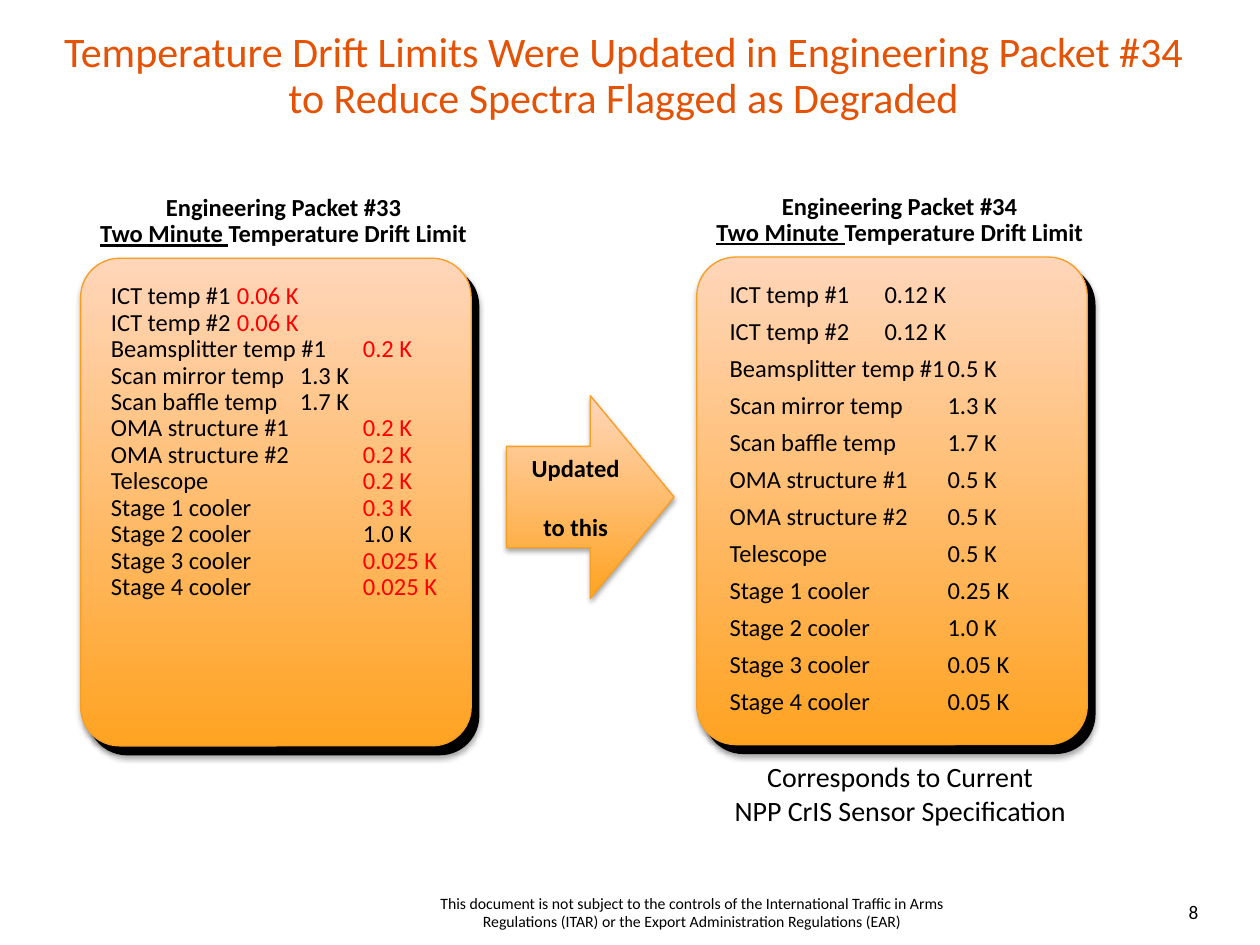
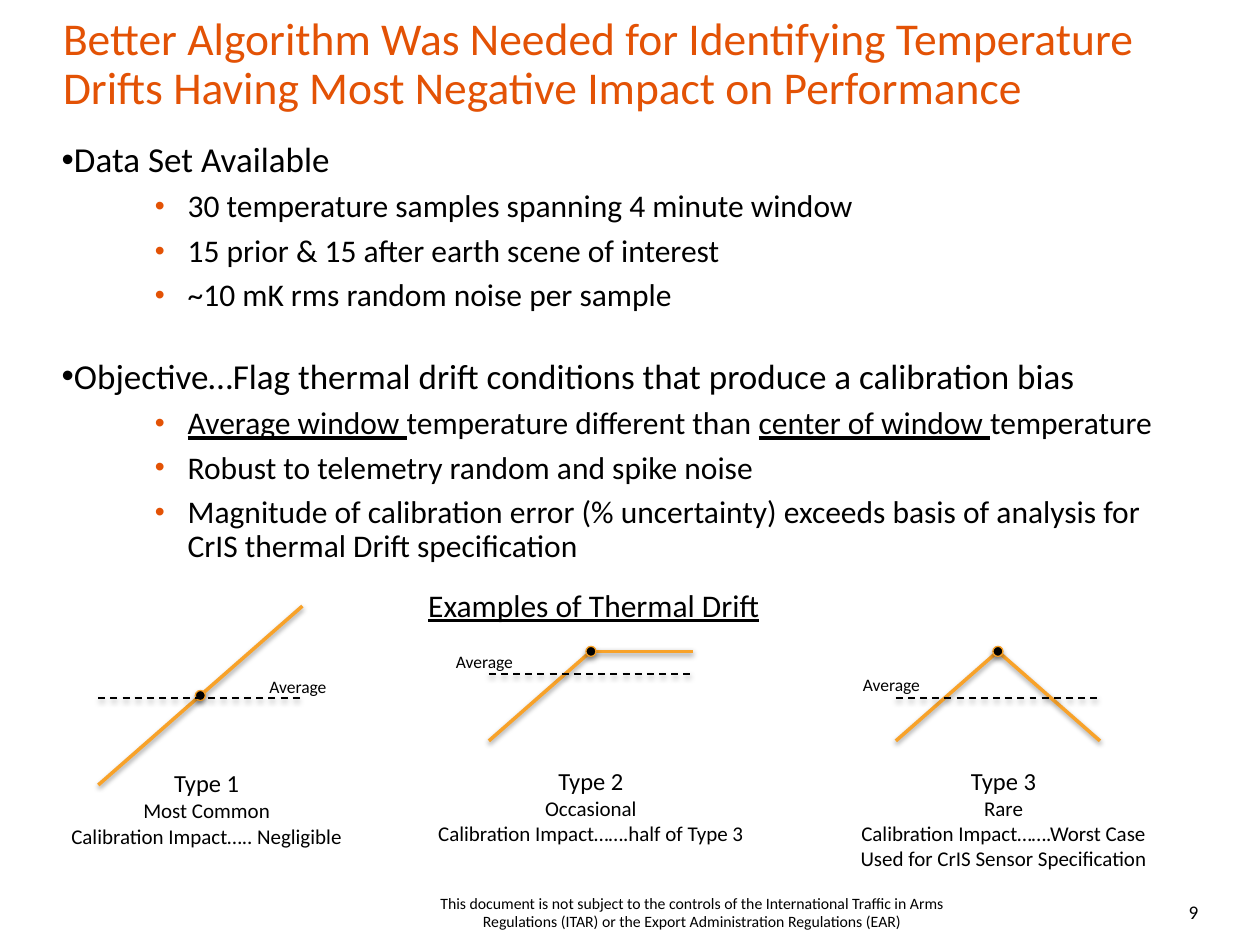
from dataclasses import dataclass

from lxml.etree import SubElement
from pptx import Presentation
from pptx.dml.color import RGBColor
from pptx.enum.dml import MSO_LINE_DASH_STYLE as DASH
from pptx.enum.shapes import MSO_CONNECTOR, MSO_SHAPE
from pptx.enum.text import MSO_ANCHOR, MSO_AUTO_SIZE, PP_ALIGN
from pptx.oxml.ns import qn
from pptx.util import Inches, Pt

FONT = "Calibri"
BLACK = RGBColor(0x00, 0x00, 0x00)
RED = RGBColor(0xFF, 0x00, 0x00)
TITLE_ORANGE = RGBColor(0xE3, 0x52, 0x05)
EDGE_ORANGE = RGBColor(0xF8, 0x9F, 0x23)
DRIFT_ORANGE = RGBColor(0xF8, 0xA2, 0x29)
DEEP_ORANGE = RGBColor(0xFF, 0xA3, 0x22)
PALE_ORANGE = RGBColor(0xFF, 0xD6, 0xBA)

FOOTER = ("This document is not subject to the controls of the International Traffic in Arms "
          "Regulations (ITAR) or the Export Administration Regulations (EAR)")


@dataclass(frozen=True)
class Box:
    left: float
    top: float
    width: float
    height: float

    def lengths(self) -> tuple:
        return tuple(Inches(v) for v in (self.left, self.top, self.width, self.height))


@dataclass(frozen=True)
class Span:
    text: str
    color: RGBColor = BLACK
    underline: bool = False


@dataclass(frozen=True)
class Limit:
    sensor: str
    value: str
    tab: float
    changed: bool = False


@dataclass(frozen=True)
class Panel:
    left: float
    top: float
    packet: str
    limits: list
    inset: float
    gap: int


@dataclass(frozen=True)
class Bullet:
    spans: list
    top_level: bool = False
    gap: int = 6


@dataclass(frozen=True)
class DriftExample:
    points: list
    average_y: float
    label: tuple
    caption: list
    caption_box: Box


# Shared helpers
def add_shadow(shape, opacity: int, distance: float) -> None:
    effects = SubElement(shape._element.spPr, qn("a:effectLst"))
    shadow = SubElement(effects, qn("a:outerShdw"), blurRad=str(Pt(3.1)), dist=str(Pt(distance)),
                        dir="5400000", rotWithShape="0")
    color = SubElement(shadow, qn("a:srgbClr"), val="000000")
    SubElement(color, qn("a:alpha"), val=str(opacity * 1000))


def add_spans(p, spans: list, size: float, bold: bool = False) -> None:
    for span in spans:
        r = p.add_run()
        r.text = span.text
        r.font.name, r.font.size, r.font.bold = FONT, Pt(size), bold
        r.font.color.rgb = span.color
        r.font.underline = span.underline


def next_paragraph(tf, index: int):
    return tf.add_paragraph() if index else tf.paragraphs[0]


def text_box(s, box: Box, wrap: bool = True, left: float = 0.1, anchor=MSO_ANCHOR.TOP):
    tf = s.shapes.add_textbox(*box.lengths()).text_frame
    tf.word_wrap = wrap
    tf.margin_left = Inches(left)
    tf.vertical_anchor = anchor
    return tf


def add_lines(tf, lines: list, sizes: list, align=PP_ALIGN.CENTER, bold: bool = False,
              underline: bool = False) -> None:
    """Write one paragraph a line, each with its own size."""
    for i, (line, size) in enumerate(zip(lines, sizes)):
        p = next_paragraph(tf, i)
        p.alignment = align
        add_spans(p, [Span(line, underline=underline)], size, bold)


def add_shape(s, kind, box: Box, color: RGBColor = None):
    """Add an orange-edged shape; without a colour it gets the gradient."""
    sp = s.shapes.add_shape(kind, *box.lengths())
    if color is None:
        sp.fill.gradient()
        sp.fill.gradient_angle = 90
        for stop, rgb in zip(sp.fill.gradient_stops, (DEEP_ORANGE, PALE_ORANGE)):
            stop.color.rgb = rgb
    else:
        sp.fill.solid()
        sp.fill.fore_color.rgb = color
    sp.line.color.rgb = EDGE_ORANGE
    sp.line.width = Pt(0.75)
    add_shadow(sp, 35, 1.8)
    return sp


def add_line(s, start: tuple, end: tuple, color: RGBColor, width: float, dashed: bool = False):
    cn = s.shapes.add_connector(MSO_CONNECTOR.STRAIGHT, *(Inches(v) for v in (*start, *end)))
    cn.line.color.rgb = color
    cn.line.width = Pt(width)
    if dashed:
        cn.line.dash_style = DASH.DASH
    add_shadow(cn, 38, 1.6)


def new_slide(prs, number: int, title: str, box: Box, size: int, align):
    s = prs.slides.add_slide(prs.slide_layouts[5])
    sp = s.shapes.title
    sp.left, sp.top, sp.width, sp.height = box.lengths()
    tf = sp.text_frame
    tf.text = title
    tf.auto_size = MSO_AUTO_SIZE.NONE
    tf.vertical_anchor = MSO_ANCHOR.TOP
    tf.margin_left = 0
    p = tf.paragraphs[0]
    p.alignment, p.line_spacing = align, 0.9
    for r in p.runs:
        r.font.name, r.font.size = FONT, Pt(size)
        r.font.color.rgb = TITLE_ORANGE
    # Footer and slide number
    add_lines(text_box(s, Box(9.16, 7.04, 0.45, 0.4), anchor=MSO_ANCHOR.MIDDLE),
              [str(number)], [11], PP_ALIGN.RIGHT)
    add_lines(text_box(s, Box(3.22, 7.04, 4.54, 0.4), anchor=MSO_ANCHOR.MIDDLE), [FOOTER], [9])
    return s


# Slide 8: temperature drift limits
OLD_LIMITS = [
    Limit("ICT temp #1", "0.06 K", 1, True),
    Limit("ICT temp #2", "0.06 K", 1, True),
    Limit("Beamsplitter temp #1", "0.2 K", 2, True),
    Limit("Scan mirror temp", "1.3 K", 1.5),
    Limit("Scan baffle temp", "1.7 K", 1.5),
    Limit("OMA structure #1", "0.2 K", 2, True),
    Limit("OMA structure #2", "0.2 K", 2, True),
    Limit("Telescope", "0.2 K", 2, True),
    Limit("Stage 1 cooler", "0.3 K", 2, True),
    Limit("Stage 2 cooler", "1.0 K", 2),
    Limit("Stage 3 cooler", "0.025 K", 2, True),
    Limit("Stage 4 cooler", "0.025 K", 2, True),
]
NEW_VALUES = ["0.12", "0.12", "0.5", "1.3", "1.7", "0.5", "0.5", "0.5", "0.25", "1.0", "0.05", "0.05"]
NEW_LIMITS = [Limit(old.sensor, f"{value} K", 1.23 if old.sensor.startswith("ICT") else 1.73)
              for old, value in zip(OLD_LIMITS, NEW_VALUES)]
PANELS = [
    Panel(0.64, 2.05, "Engineering Packet #33", OLD_LIMITS, 0, 0),
    Panel(5.53, 2.04, "Engineering Packet #34", NEW_LIMITS, 0.02, 6),
]


def draw_panel(s, panel: Panel) -> None:
    # Black offset card behind the gradient card
    for offset_x, offset_y, color in ((0.06, 0.07, BLACK), (0, 0, None)):
        card = Box(panel.left + offset_x, panel.top + offset_y, 3.1, 3.87)
        sp = add_shape(s, MSO_SHAPE.ROUNDED_RECTANGLE, card, color)
        sp.adjustments[0] = 0.1
        if color is not None:
            sp.line.color.rgb = color
    # Heading
    tf = text_box(s, Box(panel.left, panel.top - 0.55, 3.25, 0.55), left=0.07)
    heading = [[Span(panel.packet)],
               [Span("Two Minute ", underline=True), Span("Temperature Drift Limit")]]
    for i, spans in enumerate(heading):
        p = next_paragraph(tf, i)
        p.alignment, p.line_spacing = PP_ALIGN.CENTER, 0.9
        add_spans(p, spans, 14, bold=True)
    # Limits, with the values on tab stops
    tf = text_box(s, Box(panel.left + 0.24, panel.top + 0.15, 3.01, 3.96), left=panel.inset)
    for i, limit in enumerate(panel.limits):
        p = next_paragraph(tf, i)
        tabs = SubElement(p._p.get_or_add_pPr(), qn("a:tabLst"))
        SubElement(tabs, qn("a:tab"), pos=str(Inches(limit.tab)), algn="l")
        p.line_spacing = 0.9
        p.space_before = Pt(panel.gap if i else 0)
        add_spans(p, [Span(limit.sensor),
                      Span("\t" + limit.value, RED if limit.changed else BLACK)], 14)


def limits_slide(prs) -> None:
    s = new_slide(prs, 8, "Temperature Drift Limits Were Updated in Engineering Packet #34\v"
                  "to Reduce Spectra Flagged as Degraded", Box(0, 0.2, 10, 0.81), 24, PP_ALIGN.CENTER)
    for panel in PANELS:
        draw_panel(s, panel)
    # Arrow between the panels
    arrow = add_shape(s, MSO_SHAPE.RIGHT_ARROW, Box(4.02, 3.14, 1.33, 1.61))
    tf = arrow.text_frame
    tf.margin_left, tf.margin_right = Inches(0.15), Inches(0.05)
    tf.vertical_anchor = MSO_ANCHOR.MIDDLE
    add_lines(tf, ["Updated", "to this"], [14, 14], bold=True)
    tf.paragraphs[1].space_before = Pt(17)
    add_lines(text_box(s, Box(5.51, 5.98, 3.27, 0.64), wrap=False),
              ["Corresponds to Current", "NPP CrIS Sensor Specification"], [16, 16])


# Slide 9: need for a better algorithm
BULLETS = [
    Bullet([Span("Data Set Available")], True, 0),
    Bullet([Span("30 temperature samples spanning 4 minute window")]),
    Bullet([Span("15 prior & 15 after earth scene of interest")]),
    Bullet([Span("~10 mK rms random noise per sample")]),
    Bullet([Span("Objective…Flag thermal drift conditions that produce a calibration bias")], True, 26),
    Bullet([Span("Average window ", underline=True), Span("temperature different than "),
            Span("center of window ", underline=True), Span("temperature")]),
    Bullet([Span("Robust to telemetry random and spike noise")]),
    Bullet([Span("Magnitude of calibration error (% uncertainty) exceeds basis of analysis for "
                 "CrIS thermal Drift specification")]),
]
EXAMPLES = [
    DriftExample([(0.78, 6.23), (1.59, 5.52), (2.4, 4.81)], 5.54, (2.04, 5.32),
                 ["Type 1", "Most Common", "Calibration Impact….. Negligible"],
                 Box(0.34, 6.05, 2.6, 0.74)),
    DriftExample([(3.88, 5.88), (4.69, 5.17), (5.5, 5.17)], 5.35, (3.52, 5.12),
                 ["Type 2", "Occasional", "Calibration Impact…….half of Type 3"],
                 Box(3.22, 6.03, 2.94, 0.74)),
    DriftExample([(7.11, 5.88), (7.92, 5.17), (8.73, 5.88)], 5.54, (6.75, 5.3),
                 ["Type 3", "Rare", "Calibration Impact…….Worst Case",
                  "Used for CrIS Sensor Specification"], Box(6.56, 6.03, 2.81, 0.94)),
]
DOT = 0.08


def add_bullet(p, bullet: Bullet) -> None:
    pPr = p._p.get_or_add_pPr()
    if not bullet.top_level:
        pPr.set("marL", str(Inches(1)))
        pPr.set("indent", str(Inches(-0.26)))
        color = SubElement(pPr, qn("a:buClr"))
        SubElement(color, qn("a:srgbClr"), val=str(TITLE_ORANGE))
        SubElement(pPr, qn("a:buSzPct"), val="90000")
    SubElement(pPr, qn("a:buFont"), typeface="Arial")
    SubElement(pPr, qn("a:buChar"), char="•")
    p.line_spacing, p.space_before = 0.9, Pt(bullet.gap)
    add_spans(p, bullet.spans, 20 if bullet.top_level else 18)


def draw_example(s, example: DriftExample) -> None:
    start, center, end = example.points
    add_line(s, start, center, DRIFT_ORANGE, 2)
    add_line(s, center, end, DRIFT_ORANGE, 2)
    add_shape(s, MSO_SHAPE.OVAL, Box(center[0] - DOT / 2, center[1] - DOT / 2, DOT, DOT), BLACK)
    add_line(s, (start[0], example.average_y), (end[0], example.average_y), BLACK, 1, dashed=True)
    add_lines(text_box(s, Box(*example.label, 0.72, 0.27), wrap=False), ["Average"], [10], PP_ALIGN.LEFT)
    add_lines(text_box(s, example.caption_box, wrap=False), example.caption, [14, 12, 12, 12])


def algorithm_slide(prs) -> None:
    s = new_slide(prs, 9, "Better Algorithm Was Needed for Identifying Temperature Drifts "
                  "Having Most Negative Impact on Performance", Box(0.5, 0.08, 9, 1.1), 26, PP_ALIGN.LEFT)
    tf = text_box(s, Box(0.49, 1.08, 9, 3.5), left=0)
    for i, bullet in enumerate(BULLETS):
        add_bullet(next_paragraph(tf, i), bullet)
    add_lines(text_box(s, Box(3.3, 4.6, 2.86, 0.4), wrap=False),
              ["Examples of Thermal Drift"], [18], PP_ALIGN.LEFT, underline=True)
    for example in EXAMPLES:
        draw_example(s, example)


def main() -> None:
    prs = Presentation()
    prs.slide_width, prs.slide_height = Inches(10), Inches(7.5)
    limits_slide(prs)
    algorithm_slide(prs)
    prs.save("out.pptx")


if __name__ == "__main__":
    main()
